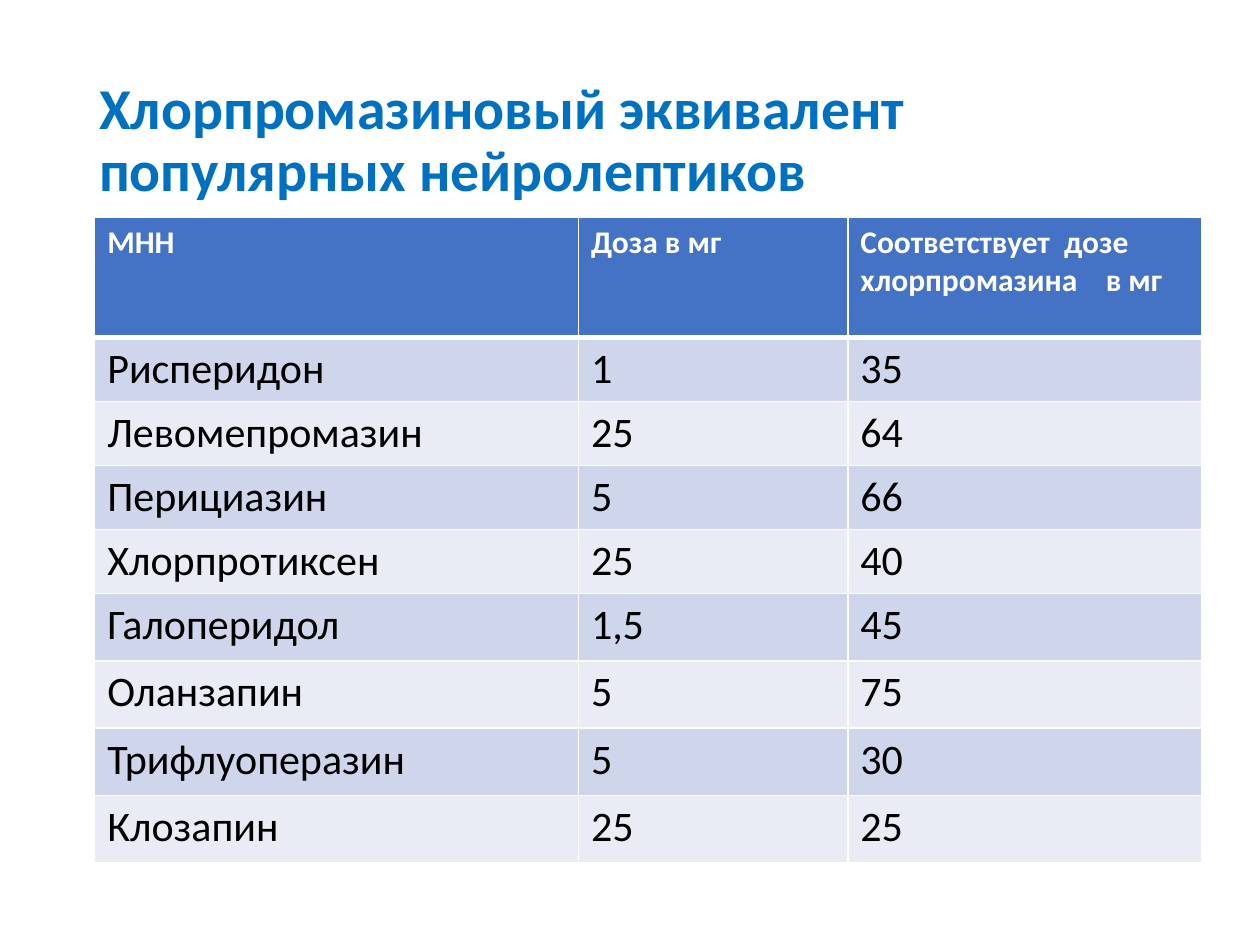
"""Build a slide with a table of chlorpromazine equivalents."""
import dataclasses

import pptx
import pptx.dml.color
import pptx.enum.text
import pptx.oxml
import pptx.oxml.ns
import pptx.util

Cm = pptx.util.Cm
Pt = pptx.util.Pt

FONT = "Calibri"
WHITE = "FFFFFF"
HEADER_FILL = "4472C4"
BAND_FILLS = ("CFD5EA", "E9EBF5")
COLUMN_WIDTHS = (9.75, 5.43, 7.14)
HEADINGS = ("МНН", "Доза в мг", "Соответствует  дозе хлорпромазина    в мг")


@dataclasses.dataclass(frozen=True)
class Drug:
    name: str
    dose: str
    equivalent: str
    height: float


DRUGS = (
    Drug("Рисперидон", "1", "35", 1.29),
    Drug("Левомепромазин", "25", "64", 1.29),
    Drug("Перициазин", "5", "66", 1.29),
    Drug("Хлорпротиксен", "25", "40", 1.29),
    Drug("Галоперидол", "1,5", "45", 1.36),
    Drug("Оланзапин", "5", "75", 1.36),
    Drug("Трифлуоперазин", "5", "30", 1.36),
    Drug("Клозапин", "25", "25", 1.36),
)


def color(code: str) -> pptx.dml.color.RGBColor:
    return pptx.dml.color.RGBColor.from_string(code)


def write(frame, text: str, *, size: float, ink: str, bold: bool = False,
          spacing: float = 1.0) -> None:
    paragraph = frame.paragraphs[0]
    paragraph.line_spacing = spacing
    run = paragraph.add_run()
    run.text = text
    run.font.name = FONT
    run.font.size = Pt(size)
    run.font.bold = bold
    run.font.color.rgb = color(ink)


def set_borders(cell, top: float = 1, bottom: float = 1) -> None:
    properties = cell._tc.get_or_add_tcPr()
    for side, width in (("L", 1), ("R", 1), ("T", top), ("B", bottom)):
        properties.append(pptx.oxml.parse_xml(
            f'<a:ln{side} {pptx.oxml.ns.nsdecls("a")} w="{Pt(width)}">'
            f'<a:solidFill><a:srgbClr val="{WHITE}"/></a:solidFill></a:ln{side}>'))


def fill_row(table, index: int, texts: tuple[str, ...], *, height: float,
             fill: str, size: float, ink: str, bold: bool = False,
             top: float = 1, bottom: float = 1) -> None:
    table.rows[index].height = Cm(height)
    for cell, text in zip(table.rows[index].cells, texts):
        set_borders(cell, top, bottom)
        cell.fill.solid()
        cell.fill.fore_color.rgb = color(fill)
        write(cell.text_frame, text, size=size, ink=ink, bold=bold)


def add_title(slide) -> None:
    title = slide.shapes.add_textbox(Cm(1.75), Cm(1.02), Cm(21.9), Cm(3.68))
    title.text_frame.word_wrap = True
    title.text_frame.vertical_anchor = pptx.enum.text.MSO_ANCHOR.MIDDLE
    write(title.text_frame, "Хлорпромазиновый эквивалент популярных нейролептиков",
          size=33, ink="0070C0", bold=True, spacing=0.9)


def add_doses(slide) -> None:
    header_height = 2.43
    height = header_height + sum(drug.height for drug in DRUGS)
    doses = slide.shapes.add_table(
        len(DRUGS) + 1, len(HEADINGS), Cm(1.91), Cm(4.37),
        Cm(sum(COLUMN_WIDTHS)), Cm(height)).table
    for column, width in zip(doses.columns, COLUMN_WIDTHS):
        column.width = Cm(width)
    fill_row(doses, 0, HEADINGS, height=header_height, fill=HEADER_FILL,
             size=18, ink=WHITE, bold=True, bottom=3)
    for index, drug in enumerate(DRUGS, start=1):
        fill_row(doses, index, (drug.name, drug.dose, drug.equivalent),
                 height=drug.height, fill=BAND_FILLS[(index - 1) % 2],
                 size=24, ink="000000", top=3 if index == 1 else 1)


def main() -> None:
    presentation = pptx.Presentation()
    presentation.slide_width = Cm(25.4)
    presentation.slide_height = Cm(19.05)
    slide = presentation.slides.add_slide(presentation.slide_layouts[6])
    add_title(slide)
    add_doses(slide)
    presentation.save("out.pptx")


if __name__ == "__main__":
    main()
